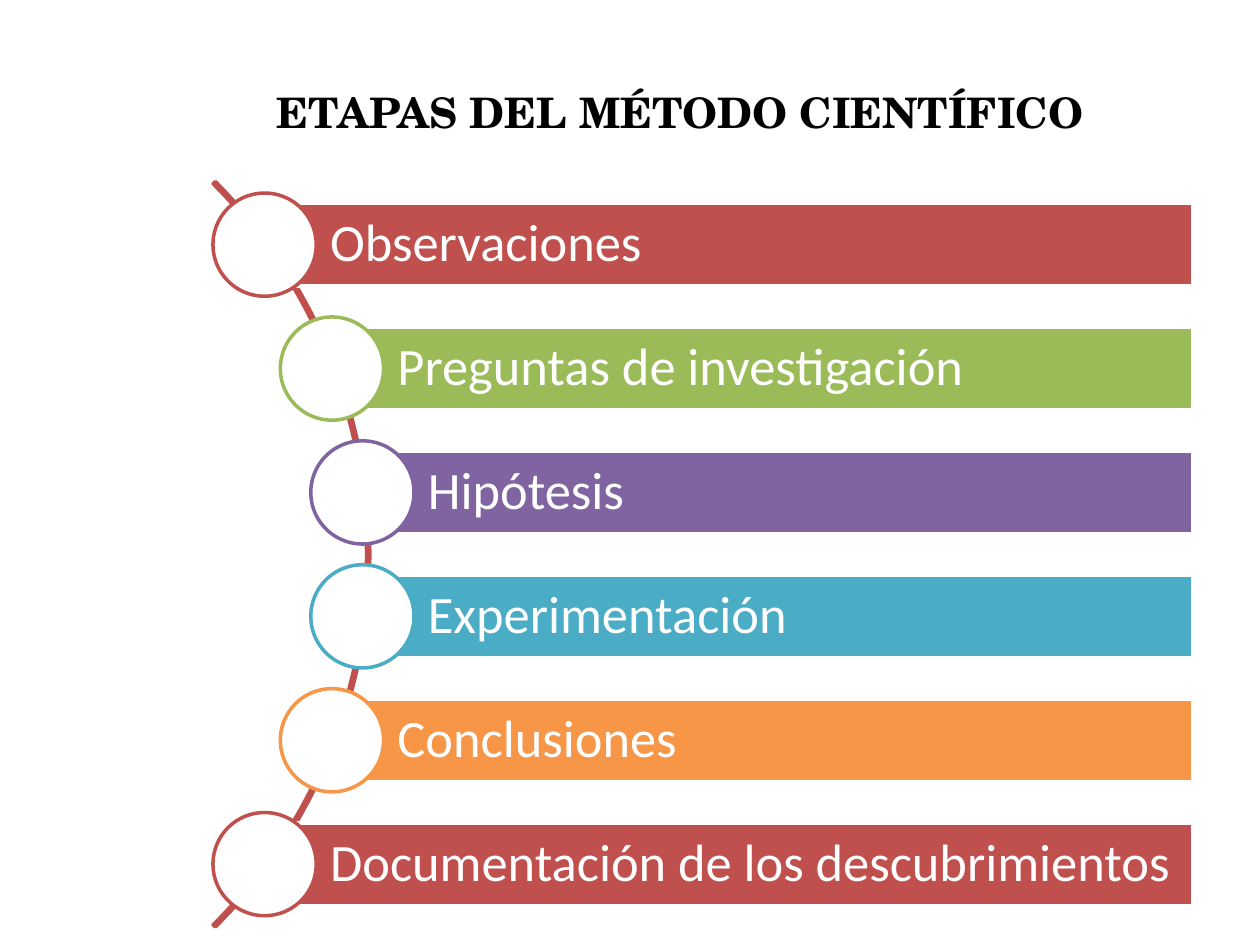
from math import sqrt

from pptx import Presentation
from pptx.dml.color import RGBColor
from pptx.enum.shapes import MSO_SHAPE
from pptx.enum.text import MSO_ANCHOR, PP_ALIGN
from pptx.util import Inches, Pt

ARC, BAR, CIRCLE = MSO_SHAPE.BLOCK_ARC, MSO_SHAPE.RECTANGLE, MSO_SHAPE.OVAL
MIDDLE = MSO_ANCHOR.MIDDLE
LEFT, CENTER = PP_ALIGN.LEFT, PP_ALIGN.CENTER
WHITE, BLACK, RED = "FFFFFF", "000000", "C0504D"
TITLE_BOX = (1.93, 0.36, 6.93, 1.02)
STAGES_BOX = (1.69, 1.45, 7.78, 5.9)
STAGES = [
    ("Observaciones", RED),
    ("Preguntas de investigación", "9BBB59"),
    ("Hipótesis", "8064A2"),
    ("Experimentación", "4BACC6"),
    ("Conclusiones", "F79646"),
    ("Documentación de los descubrimientos", RED),
]


def color(value):
    return RGBColor.from_string(value)


def write(shape, text, align, spacing, ink, **font):
    frame = shape.text_frame
    frame.word_wrap = True
    frame.vertical_anchor = MIDDLE
    para = frame.paragraphs[0]
    para.alignment, para.line_spacing = align, spacing
    span = para.add_run()
    span.text = text
    span.font.color.rgb = color(ink)
    for name, value in font.items():
        setattr(span.font, name, value)


def add_outlined(page, kind, box, fill, line):
    shape = page.shapes.add_shape(kind, *map(Inches, box))
    shape.shadow.inherit = False
    if fill:
        shape.fill.solid()
        shape.fill.fore_color.rgb = color(fill)
    else:
        shape.fill.background()
    shape.line.color.rgb = color(line)
    shape.line.width = Pt(2)
    return shape


def add_title(page, box):
    title = page.shapes.title
    title.left, title.top, title.width, title.height = map(Inches, box)
    write(title, "ETAPAS DEL MÉTODO CIENTÍFICO", CENTER, 1.1, BLACK,
          size=Pt(24), name="TeX Gyre Schola", bold=True)


def add_stages(page, box, stages):
    """Equal rows whose circles sit on an arc that bulges to the right."""
    left, top, width, height = box
    row = height / len(stages)
    bar, circle = row * 2 / 3, row * 5 / 6
    radius, track = height * 0.709, height * 0.704
    middle = top + height / 2
    centers = [top + row * (index + 0.5) for index in range(len(stages))]
    reaches = [sqrt(track ** 2 - (y - middle) ** 2) for y in centers]
    arc_x = left + circle / 2 - reaches[0]

    arc = add_outlined(page, ARC, (arc_x - radius, middle - radius,
                                   2 * radius, 2 * radius), None, RED)
    for index, value in enumerate((189, 27, 0.003)):
        arc.adjustments[index] = value

    for (text, tint), y, reach in zip(stages, centers, reaches):
        x = arc_x + reach
        strip = add_outlined(page, BAR, (x, y - bar / 2, left + width - x, bar),
                             tint, WHITE)
        frame = strip.text_frame
        frame.margin_left = Inches(0.52)
        frame.margin_top = frame.margin_right = frame.margin_bottom = Inches(0.08)
        write(strip, text, LEFT, 0.9, WHITE, size=Pt(30), name="Calibri")
        add_outlined(page, CIRCLE, (x - circle / 2, y - circle / 2, circle, circle),
                     WHITE, tint)


def main():
    deck = Presentation()
    deck.slide_width, deck.slide_height = Inches(10), Inches(7.5)
    page = deck.slides.add_slide(deck.slide_layouts.get_by_name("Title Only"))
    add_stages(page, STAGES_BOX, STAGES)
    add_title(page, TITLE_BOX)
    deck.save("out.pptx")


if __name__ == "__main__":
    main()
